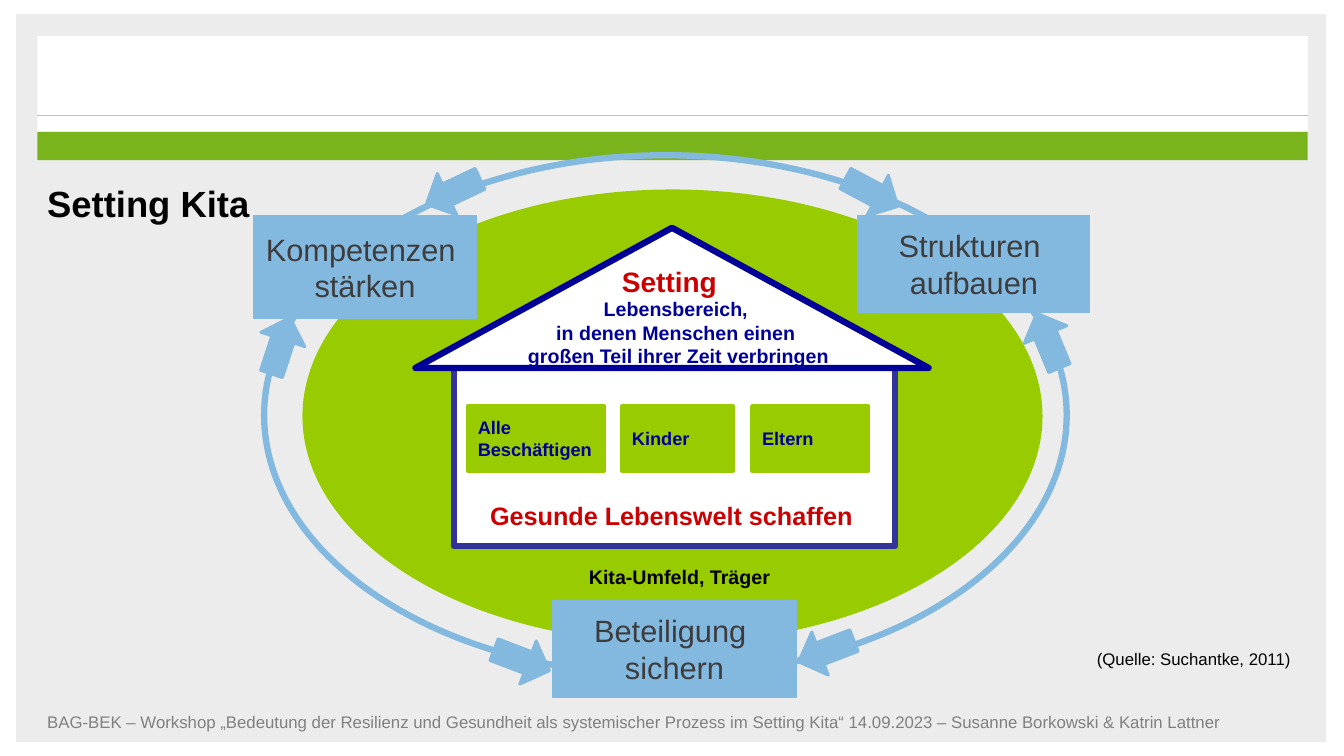
"""Builds the slide about the nursery as a health setting."""
import pptx
import pptx.dml.color
import pptx.enum.shapes
import pptx.enum.text
import pptx.oxml.ns
import pptx.util
from lxml import etree

RGB = pptx.dml.color.RGBColor
KIND = pptx.enum.shapes.MSO_SHAPE
ALIGN = pptx.enum.text.PP_ALIGN
ANCHOR = pptx.enum.text.MSO_ANCHOR

SCALE = 9144
PALE = RGB(0xEC, 0xEC, 0xED)
WHITE = RGB(0xFF, 0xFF, 0xFF)
BLACK = RGB(0x00, 0x00, 0x00)
SILVER = RGB(0xBF, 0xBF, 0xBF)
GREY = RGB(0x80, 0x80, 0x80)
DARK = RGB(0x3D, 0x3D, 0x3F)
GREEN = RGB(0x7A, 0xB4, 0x1D)
LIME = RGB(0x99, 0xCC, 0x00)
BLUE = RGB(0x84, 0xB9, 0xDF)
NAVY = RGB(0x00, 0x00, 0x99)
INDIGO = RGB(0x33, 0x33, 0x99)
RED = RGB(0xCC, 0x00, 0x00)


def px(*values):
    """Turn px lengths into EMU."""
    return [value * SCALE for value in values]


def write(shape, text, size=12, color=BLACK, bold=False, align=ALIGN.LEFT,
          anchor=ANCHOR.TOP, wrap=True):
    """Put formatted text into a shape, one paragraph per line."""
    frame = shape.text_frame
    frame.text = text
    frame.word_wrap = wrap
    frame.vertical_anchor = anchor
    for para in frame.paragraphs:
        para.alignment = align
        for run in para.runs:
            run.font.name = "Arial"
            run.font.size = pptx.util.Pt(size)
            run.font.bold = bold
            run.font.color.rgb = color


def label(slide, place, text, **style):
    """Add a text box."""
    write(slide.shapes.add_textbox(*px(*place)), text, **style)


def draw(slide, kind, place, fill=None, line=None, width=1, turn=0):
    """Add a preset shape with plain fill and line."""
    shape = slide.shapes.add_shape(kind, *px(*place))
    shape.shadow.inherit = False
    shape.rotation = turn
    if fill is None:
        shape.fill.background()
    else:
        shape.fill.solid()
        shape.fill.fore_color.rgb = fill
    if line is None:
        shape.line.fill.background()
    else:
        shape.line.color.rgb = line
        shape.line.width = pptx.util.Pt(width)
    return shape


def rule(slide, ends, color, width):
    """Add a straight line."""
    line = slide.shapes.add_connector(
        pptx.enum.shapes.MSO_CONNECTOR.STRAIGHT, *px(*ends))
    line.line.color.rgb = color
    line.line.width = pptx.util.Pt(width)
    etree.SubElement(line._element.spPr, pptx.oxml.ns.qn("a:effectLst"))


def frame_page(slide):
    """Draw the page ground, header, title and footer."""
    draw(slide, KIND.RECTANGLE, (16, 14, 1299, 722), PALE)
    draw(slide, KIND.RECTANGLE, (37, 36, 1260, 94), WHITE)
    rule(slide, (37, 115, 1297, 115), SILVER, 0.75)
    draw(slide, KIND.RECTANGLE, (37, 131, 1260, 28), GREEN)
    label(slide, (37, 175, 1260, 516), "Setting Kita", size=26, bold=True)
    label(slide, (37, 696, 1249, 40),
          "BAG-BEK – Workshop „Bedeutung der Resilienz und Gesundheit als "
          "systemischer Prozess im Setting Kita“ 14.09.2023 – "
          "Susanne Borkowski & Katrin Lattner",
          color=GREY, anchor=ANCHOR.MIDDLE)


def house(slide):
    """Draw the house with its groups inside the green field."""
    draw(slide, KIND.OVAL, (300, 188, 734, 450), LIME)
    draw(slide, KIND.RECTANGLE, (450, 365, 438, 177), WHITE, INDIGO, 4.5)
    draw(slide, KIND.ISOSCELES_TRIANGLE, (412, 226, 509, 139),
         WHITE, NAVY, 4.5)
    for left, width, name in ((464, 135, "Alle Beschäftigen"),
                              (617, 110, "Kinder"), (746, 115, "Eltern")):
        room = draw(slide, KIND.RECTANGLE, (left, 403, width, 64),
                    LIME, LIME, 3)
        write(room, name, size=13, color=NAVY, bold=True,
              anchor=ANCHOR.MIDDLE)
    style = {"bold": True, "align": ALIGN.CENTER}
    label(slide, (564, 257, 200, 42), "Setting", size=20, color=RED, **style)
    label(slide, (482, 290, 382, 77),
          "Lebensbereich, \nin denen Menschen einen \n"
          "großen Teil ihrer Zeit verbringen", size=14, color=NAVY, **style)
    label(slide, (449, 491, 434, 41), "Gesunde Lebenswelt schaffen",
          size=18, color=RED, **style)
    label(slide, (554, 555, 240, 32), "Kita-Umfeld, Träger",
          size=14, **style)


def cycle(slide):
    """Draw the ring with its three tasks and six arrows."""
    draw(slide, KIND.OVAL, (262, 154, 796, 516), line=BLUE, width=4.5)
    for place, text in (((251, 214, 222, 102), "Kompetenzen \nstärken"),
                        ((851, 214, 230, 96), "Strukturen \naufbauen"),
                        ((548, 596, 242, 96), "Beteiligung \nsichern")):
        task = draw(slide, KIND.RECTANGLE, place, BLUE, BLUE, 0.75)
        write(task, text, size=22, color=DARK, align=ALIGN.CENTER,
              anchor=ANCHOR.MIDDLE, wrap=False)
    for left, top, turn in ((249, 320, 288.2), (1010, 315, 247.5),
                            (790, 623, 159), (488, 632, 20.8),
                            (835, 168, 28.1), (420, 167, 154.7)):
        draw(slide, KIND.RIGHT_ARROW, (left, top, 59, 46),
             BLUE, BLUE, 2, turn)


def main():
    """Build and save the slide."""
    deck = pptx.Presentation()
    deck.slide_width, deck.slide_height = px(1333, 750)
    slide = deck.slides.add_slide(deck.slide_layouts[6])
    frame_page(slide)
    house(slide)
    label(slide, (1078, 639, 255, 30), "(Quelle: Suchantke, 2011)")
    cycle(slide)
    deck.save("out.pptx")


if __name__ == "__main__":
    main()
